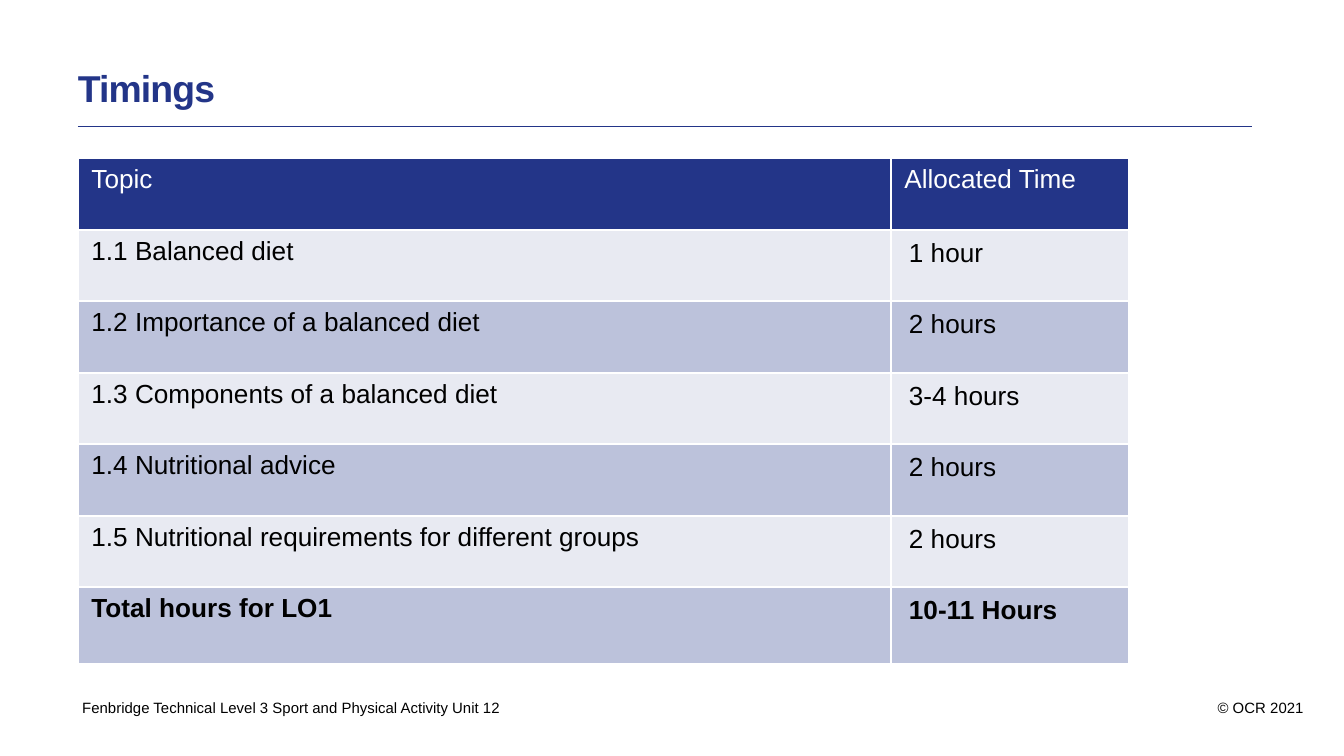
"""Build the timings slide with its table of topics and allocated hours."""
from dataclasses import dataclass

from lxml.etree import SubElement
from pptx import Presentation
from pptx.dml.color import RGBColor
from pptx.enum.shapes import MSO_CONNECTOR
from pptx.enum.text import MSO_ANCHOR, PP_ALIGN
from pptx.oxml.ns import qn
from pptx.util import Emu, Pt


@dataclass(frozen=True)
class Theme:
    font: str = "Arial"
    navy: str = "233588"
    white: str = "FFFFFF"
    black: str = "000000"
    title_size: int = 20
    table_size: int = 14
    footer_size: int = 8
    light_alpha: int = 10
    dark_alpha: int = 30


theme = Theme()
SCALE = 914400 / 134.4


def px(length):
    return Emu(round(length * SCALE))


def add_span(para, text, size, color, bold=False):
    span = para.add_run()
    span.text = text
    span.font.name = theme.font
    span.font.size = Pt(size)
    span.font.bold = bold
    span.font.color.rgb = RGBColor.from_string(color)
    return span


deck = Presentation()
deck.slide_width, deck.slide_height = px(1344), px(756)
page = deck.slides.add_slide(deck.slide_layouts[5])

title = page.shapes.title
title.left, title.top, title.width, title.height = px(78), px(65), px(1180), px(46)
frame = title.text_frame
frame.margin_left = frame.margin_top = frame.margin_right = frame.margin_bottom = 0
frame.vertical_anchor = MSO_ANCHOR.MIDDLE
frame.word_wrap = True
para = frame.paragraphs[0]
para.alignment = PP_ALIGN.LEFT
span = add_span(para, "Timings", theme.title_size, theme.navy, True)
span.font._element.set("spc", "-50")

rule = page.shapes.add_connector(MSO_CONNECTOR.STRAIGHT, px(78), px(126), px(1252), px(126))
rule.line.color.rgb = RGBColor.from_string(theme.navy)
rule.line.width = Pt(0.5)
SubElement(rule._element.spPr, qn("a:effectLst"))

rows = [
    ("Topic", "Allocated Time"),
    ("1.1 Balanced diet", "1 hour"),
    ("1.2 Importance of a balanced diet", "2 hours"),
    ("1.3 Components of a balanced diet", "3-4 hours"),
    ("1.4 Nutritional advice", "2 hours"),
    ("1.5 Nutritional requirements for different groups", "2 hours"),
    ("Total hours for LO1", "10-11 Hours"),
]
last = len(rows) - 1
table = page.shapes.add_table(len(rows), 2, px(78), px(158), px(1051), px(506)).table
table.columns[0].width, table.columns[1].width = px(813), px(238)

for row_index, texts in enumerate(rows):
    is_header, is_total = row_index == 0, row_index == last
    table.rows[row_index].height = px(77 if is_total else 72 - row_index % 2)
    for column_index, text in enumerate(texts):
        cell = table.cell(row_index, column_index)
        if column_index == 1 and not is_header:
            cell.margin_left = cell.margin_right = px(18)
            cell.margin_top = cell.margin_bottom = px(9)
        color = theme.white if is_header else theme.black
        add_span(cell.text_frame.paragraphs[0], text, theme.table_size, color, is_total)

        properties = cell._tc.get_or_add_tcPr()
        for side in ("lnL", "lnR", "lnT", "lnB"):
            border = SubElement(properties, qn(f"a:{side}"), w=str(Pt(1)))
            paint = SubElement(border, qn("a:solidFill"))
            SubElement(paint, qn("a:srgbClr"), val=theme.white)
        cell.fill.solid()
        cell.fill.fore_color.rgb = RGBColor.from_string(theme.navy)
        if not is_header:
            alpha = theme.light_alpha if row_index % 2 else theme.dark_alpha
            tint = properties.find(qn("a:solidFill")).find(qn("a:srgbClr"))
            SubElement(tint, qn("a:alpha"), val=str(alpha * 1000))

footers = [
    (69, 465, PP_ALIGN.LEFT, "Fenbridge Technical Level 3 Sport and Physical Activity Unit 12"),
    (1063, 254, PP_ALIGN.RIGHT, "© OCR 2021"),
]
for left, width, alignment, text in footers:
    box = page.shapes.add_textbox(px(left), px(692), px(width), px(32))
    box.text_frame.word_wrap = True
    para = box.text_frame.paragraphs[0]
    para.alignment = alignment
    add_span(para, text, theme.footer_size, theme.black)

deck.save("out.pptx")
